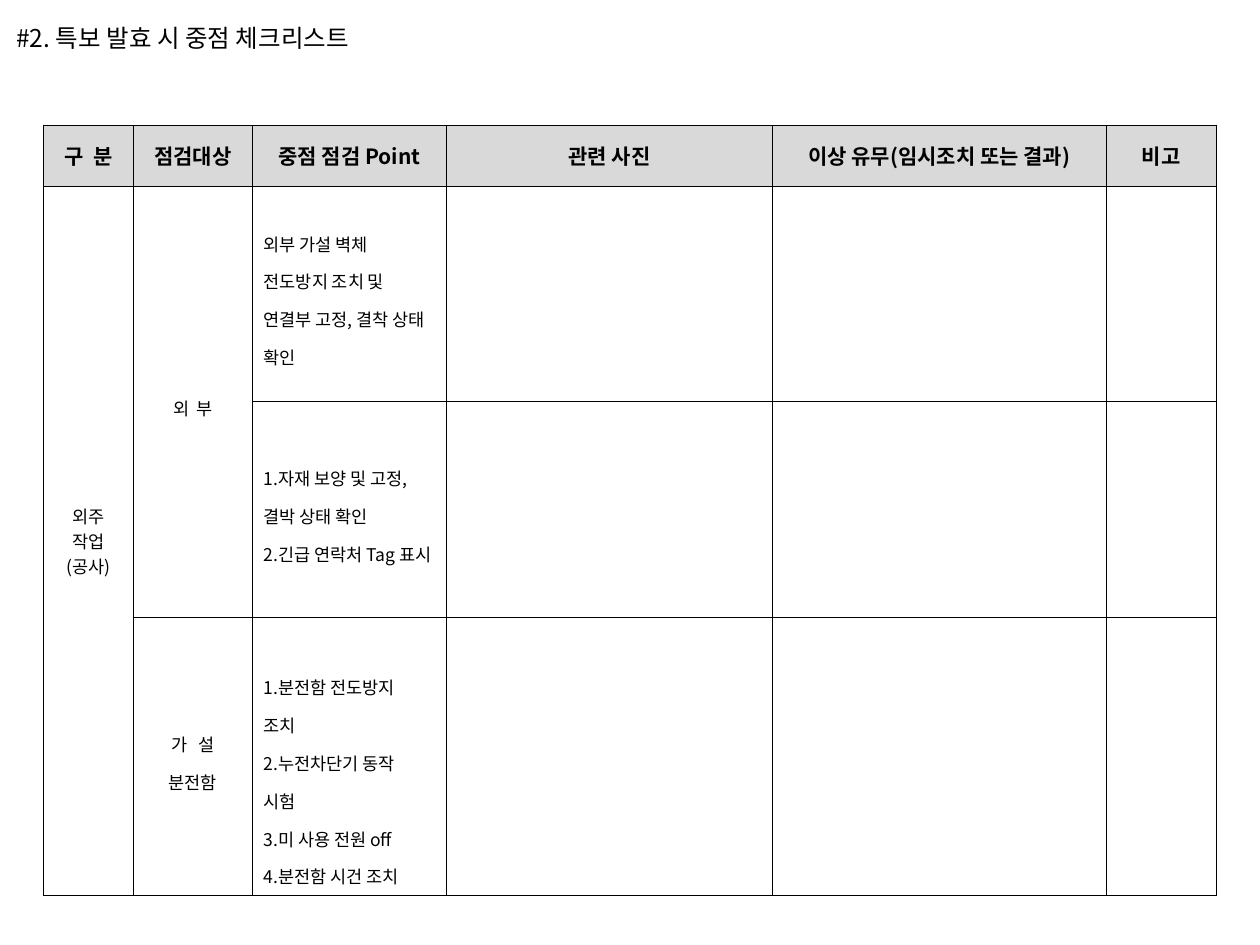
from dataclasses import dataclass
from itertools import product

from lxml.etree import SubElement
from pptx import Presentation
from pptx.dml.color import RGBColor
from pptx.enum.text import MSO_ANCHOR as Anchor, MSO_AUTO_SIZE as AutoSize, PP_ALIGN as Align
from pptx.oxml.ns import qn
from pptx.table import Table, _Cell as Cell
from pptx.util import Cm, Pt

FONT = "Noto Sans CJK KR"
BLACK = RGBColor(0x00, 0x00, 0x00)
HEADER_GRAY = RGBColor(0xD9, 0xD9, 0xD9)
BORDER_WIDTH = Pt(0.5)

COLUMN_WIDTHS = (1.81, 2.4, 3.91, 6.57, 6.73, 2.22)
ROW_HEIGHTS = (1.23, 4.35, 4.35, 4.7)
HEADERS = ("구  분", "점검대상", "중점 점검 Point", "관련 사진",
           "이상 유무(임시조치 또는 결과)", "비고")


@dataclass(frozen=True)
class Entry:
    row: int
    column: int
    lines: tuple[str, ...]
    align: Align = Align.LEFT
    spacing: float = 1.5
    row_span: int = 1
    margin_top: float = 0.13


ENTRIES = (
    Entry(1, 0, ("외주", "작업", "(공사)"), Align.CENTER, spacing=1.0, row_span=3),
    Entry(1, 1, ("외  부",), Align.CENTER, row_span=2),
    Entry(3, 1, ("가   설", "분전함"), Align.CENTER),
    Entry(1, 2, ("외부 가설 벽체 전도방지 조치 및 연결부 고정, 결착 상태 확인",)),
    Entry(2, 2, ("1.자재 보양 및 고정, 결박 상태 확인", "2.긴급 연락처 Tag 표시")),
    Entry(3, 2, ("1.분전함 전도방지", "조치", "2.누전차단기 동작", "시험",
                 "3.미 사용 전원 off", "4.분전함 시건 조치"), margin_top=0.9),
)


def write_lines(text_frame, lines: tuple[str, ...], size: float, bold: bool = False,
                align: Align = Align.LEFT, spacing: float = 1.0) -> None:
    for index, line in enumerate(lines):
        paragraph = text_frame.paragraphs[0] if index == 0 else text_frame.add_paragraph()
        paragraph.text = line
        paragraph.alignment = align
        paragraph.line_spacing = spacing
        font = paragraph.font
        font.size = Pt(size)
        font.bold = bold
        font.color.rgb = BLACK
        font.name = FONT
        defaults = paragraph._p.pPr.find(qn("a:defRPr"))
        SubElement(defaults, qn("a:ea"), typeface=FONT)


def style_cell(cell: Cell, is_header: bool) -> None:
    cell.vertical_anchor = Anchor.MIDDLE
    cell.margin_left = cell.margin_right = Cm(0.23)
    cell.margin_top = cell.margin_bottom = Cm(0.13)
    properties = cell._tc.get_or_add_tcPr()
    for side in ("lnL", "lnR", "lnT", "lnB"):
        line = SubElement(properties, qn(f"a:{side}"), w=str(BORDER_WIDTH))
        fill = SubElement(line, qn("a:solidFill"))
        SubElement(fill, qn("a:srgbClr"), val=str(BLACK))
    if is_header:
        cell.fill.solid()
        cell.fill.fore_color.rgb = HEADER_GRAY
    else:
        cell.fill.background()


def fill_entry(table: Table, entry: Entry) -> None:
    cell = table.cell(entry.row, entry.column)
    if entry.row_span > 1:
        cell.merge(table.cell(entry.row + entry.row_span - 1, entry.column))
    cell.margin_top = Cm(entry.margin_top)
    write_lines(cell.text_frame, entry.lines, 10, align=entry.align, spacing=entry.spacing)


def add_checklist(slide) -> None:
    frame = slide.shapes.add_table(
        len(ROW_HEIGHTS), len(COLUMN_WIDTHS), Cm(0.88), Cm(2.52),
        Cm(sum(COLUMN_WIDTHS)), Cm(sum(ROW_HEIGHTS)))
    table = frame.table
    table.first_row = table.horz_banding = False
    for column, width in zip(table.columns, COLUMN_WIDTHS):
        column.width = Cm(width)
    for row, height in zip(table.rows, ROW_HEIGHTS):
        row.height = Cm(height)
    for row, column in product(range(len(ROW_HEIGHTS)), range(len(COLUMN_WIDTHS))):
        style_cell(table.cell(row, column), is_header=row == 0)
    for column, header in enumerate(HEADERS):
        write_lines(table.cell(0, column).text_frame, (header,), 12, True, Align.CENTER)
    for entry in ENTRIES:
        fill_entry(table, entry)


def add_title(slide) -> None:
    title = slide.shapes.add_textbox(Cm(0.08), Cm(0.33), Cm(14.94), Cm(0.86))
    text_frame = title.text_frame
    text_frame.word_wrap = True
    text_frame.auto_size = AutoSize.SHAPE_TO_FIT_TEXT
    write_lines(text_frame, ("#2. 특보 발효 시 중점 체크리스트",), 14)


def main() -> None:
    presentation = Presentation()
    presentation.slide_width, presentation.slide_height = Cm(25.4), Cm(19.05)
    slide = presentation.slides.add_slide(presentation.slide_layouts[6])
    add_checklist(slide)
    add_title(slide)
    presentation.save("out.pptx")


if __name__ == "__main__":
    main()
